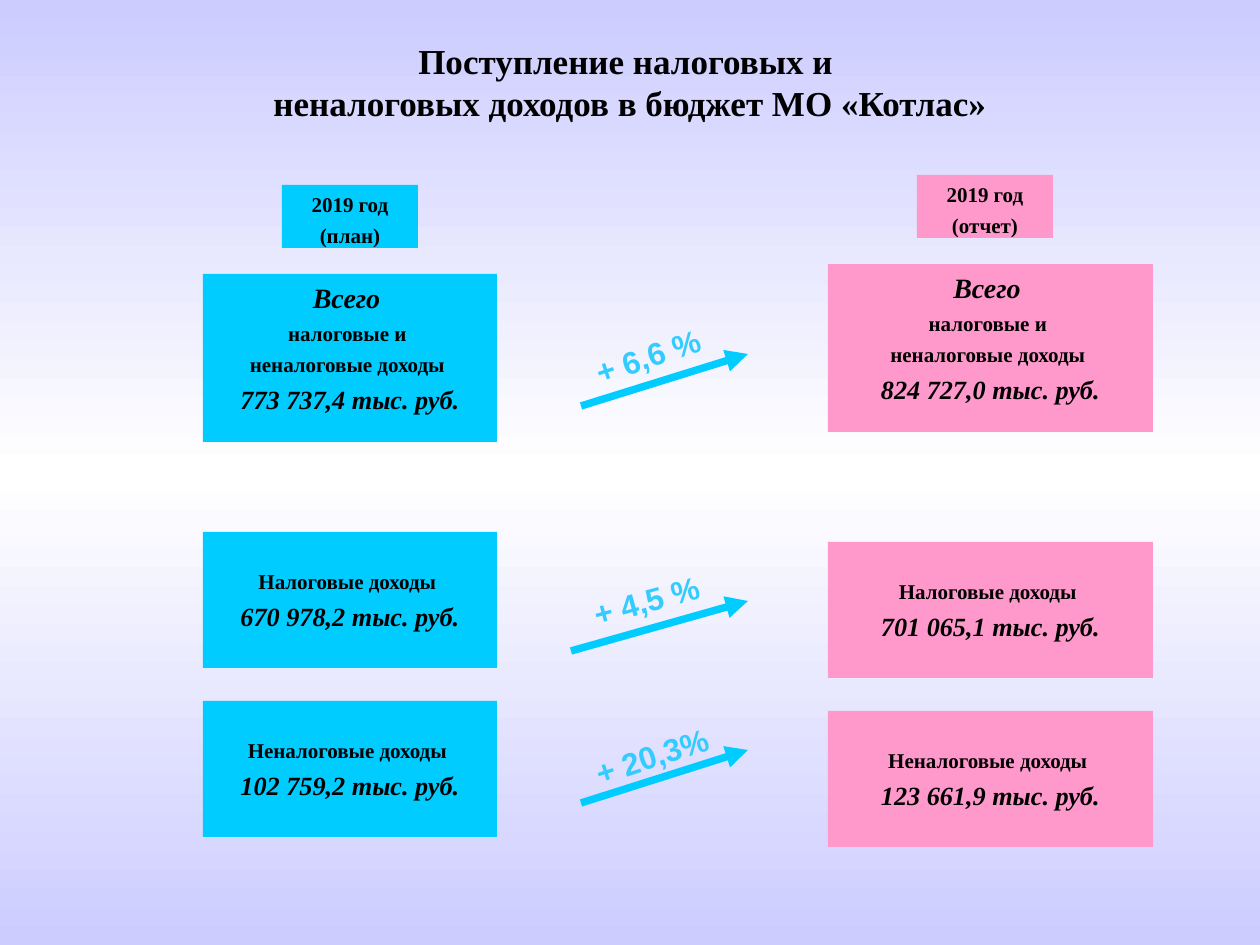
from lxml.etree import SubElement
from pptx import Presentation
from pptx.dml.color import RGBColor
from pptx.enum.shapes import MSO_CONNECTOR, MSO_SHAPE
from pptx.enum.text import MSO_ANCHOR, MSO_AUTO_SIZE, PP_ALIGN
from pptx.oxml import parse_xml
from pptx.oxml.ns import nsdecls, qn
from pptx.util import Emu, Pt

BLUE = RGBColor(0x00, 0xCC, 0xFF)
PINK = RGBColor(0xFF, 0x99, 0xCC)
SKY = RGBColor(0x33, 0xCC, 0xFF)
BLACK = RGBColor(0, 0, 0)
LILAC = RGBColor(0xCC, 0xCC, 0xFF)
WHITE = RGBColor(0xFF, 0xFF, 0xFF)
SCALE = 914400 / 126


def px(*nums):
    return [Emu(round(n * SCALE)) for n in nums]


def apply(item, form):
    for key, val in form.items():
        setattr(item, key, val)


class Deck:
    serif = {"name": "Times New Roman", "bold": True}
    sans = {"name": "Arial", "bold": True}

    def __init__(self, wide, high):
        self.file = Presentation()
        apply(self.file, dict(zip(("slide_width", "slide_height"), px(wide, high))))
        self.slide = self.file.slides.add_slide(self.file.slide_layouts[5])
        self.shapes = self.slide.shapes

    def fade(self, stops):
        marks = "".join(
            f'<a:gs pos="{pos * 1000}"><a:srgbClr val="{tone}"/></a:gs>'
            for pos, tone in stops
        )
        back = parse_xml(
            f'<p:bg {nsdecls("p", "a")}><p:bgPr><a:gradFill rotWithShape="1">'
            f'<a:gsLst>{marks}</a:gsLst><a:lin ang="5400000" scaled="1"/>'
            "</a:gradFill><a:effectLst/></p:bgPr></p:bg>"
        )
        self.slide.element.cSld.insert(0, back)

    def text(self, shape, lines, font, tone, anchor, gap=3.6):
        frame = shape.text_frame
        apply(frame, {"word_wrap": True, "auto_size": MSO_AUTO_SIZE.NONE,
                      "vertical_anchor": anchor})
        for num, (words, size, slant) in enumerate(lines):
            para = frame.add_paragraph() if num else frame.paragraphs[0]
            apply(para, {"alignment": PP_ALIGN.CENTER,
                         "space_before": Pt(gap if num else 0)})
            run = para.add_run()
            run.text = words
            apply(run.font, font | {"size": Pt(size), "italic": slant})
            run.font.color.rgb = tone

    def title(self, place, lines):
        head = self.shapes.title
        apply(head, dict(zip(("left", "top", "width", "height"), px(*place))))
        self.text(head, lines, self.serif, BLACK, MSO_ANCHOR.MIDDLE, 0)

    def box(self, place, tone, lines, anchor=MSO_ANCHOR.TOP):
        shape = self.shapes.add_shape(MSO_SHAPE.RECTANGLE, *px(*place))
        shape.shadow.inherit = False
        shape.fill.solid()
        shape.fill.fore_color.rgb = tone
        shape.line.fill.background()
        self.text(shape, lines, self.serif, BLACK, anchor)

    def arrow(self, ends):
        line = self.shapes.add_connector(MSO_CONNECTOR.STRAIGHT, *px(*ends))
        line.line.color.rgb = BLUE
        line.line.width = Pt(4.25)
        props = line.element.spPr
        SubElement(props.find(qn("a:ln")), qn("a:tailEnd"), type="triangle")
        SubElement(props, qn("a:effectLst"))

    def label(self, place, turn, words):
        note = self.shapes.add_textbox(*px(*place))
        note.rotation = turn
        self.text(note, [(words, 18, False)], self.sans, SKY, MSO_ANCHOR.TOP)


def main():
    deck = Deck(1260, 945)
    deck.fade([(0, LILAC), (50, WHITE), (100, LILAC)])
    deck.title((63, 42, 1134, 78), [
        ("Поступление налоговых и ", 20, False),
        ("неналоговых доходов в бюджет МО «Котлас»", 20, False),
    ])

    sides = [
        (BLUE, 203, 294, 282, 185, 274, 532, "(план)",
         ("773 737,4", "670 978,2", "102 759,2")),
        (PINK, 828, 325, 917, 175, 264, 542, "(отчет)",
         ("824 727,0", "701 065,1", "123 661,9")),
    ]
    kinds = ("Налоговые доходы ", "Неналоговые доходы ")
    for tone, left, wide, tab, top, mid, low, name, sums in sides:
        total, *parts = [(f"{num} тыс. руб.", 15, True) for num in sums]
        deck.box((tab, top, 136, 63), tone, [("2019 год", 12, False), (name, 12, False)])
        deck.box((left, mid, wide, 168), tone, [
            ("Всего ", 16, True),
            ("налоговые и ", 12, False),
            ("неналоговые доходы ", 12, False),
            total,
        ])
        for row, (kind, part) in enumerate(zip(kinds, parts)):
            deck.box((left, low + 169 * row, wide, 136), tone,
                     [(kind, 12, False), part], MSO_ANCHOR.MIDDLE)

    rises = [
        ((581, 406, 748, 354), (572, 335, 141, 9), 341.9, "+ 6,6 %"),
        ((571, 651, 748, 601), (573, 575, 144, 40), 344.7, "+ 4,5 %"),
        ((581, 803, 748, 750), (567, 731, 164, 32), 341.9, "+ 20,3%"),
    ]
    for ends, place, turn, words in rises:
        deck.arrow(ends)
        deck.label(place, turn, words)

    deck.file.save("out.pptx")


if __name__ == "__main__":
    main()
